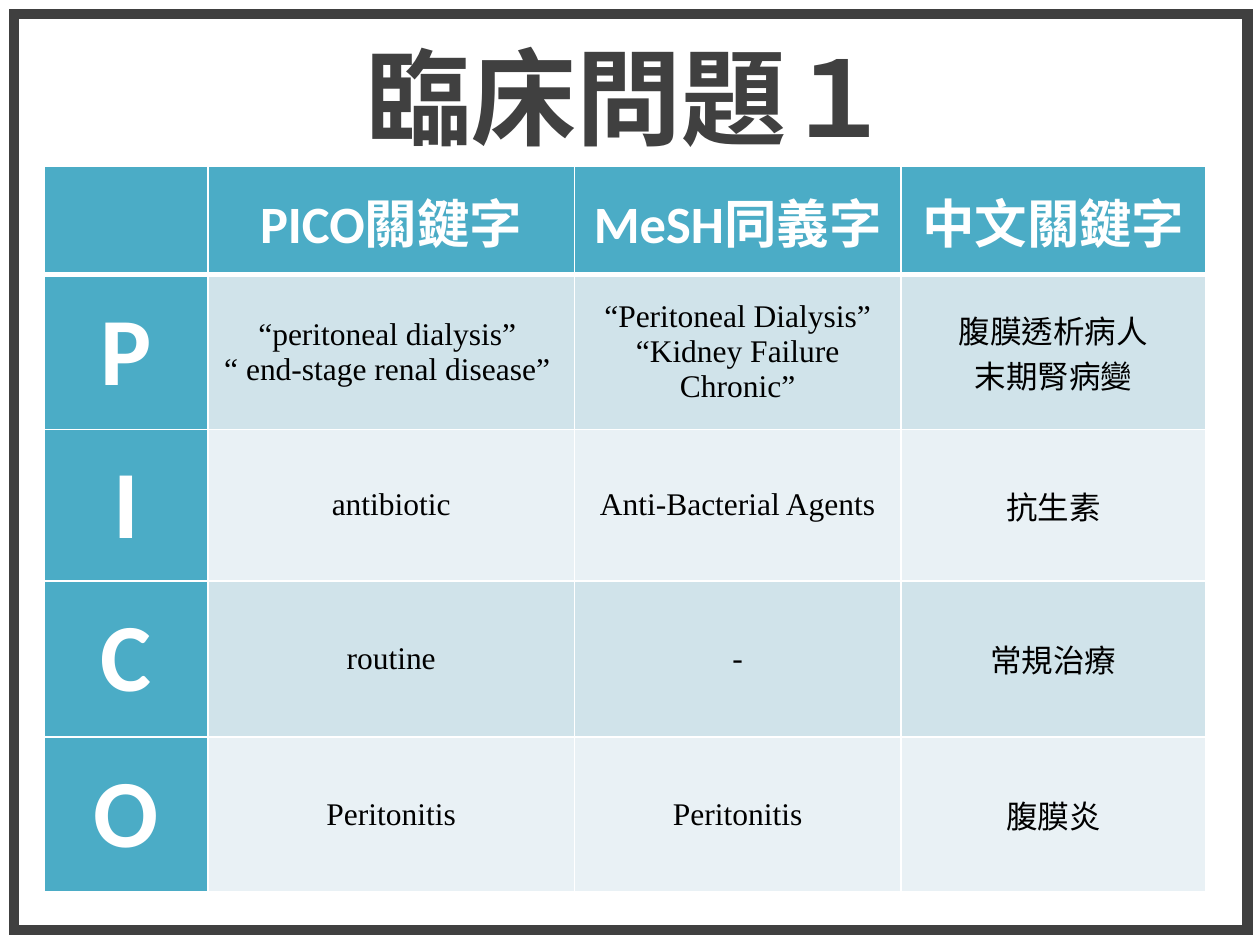
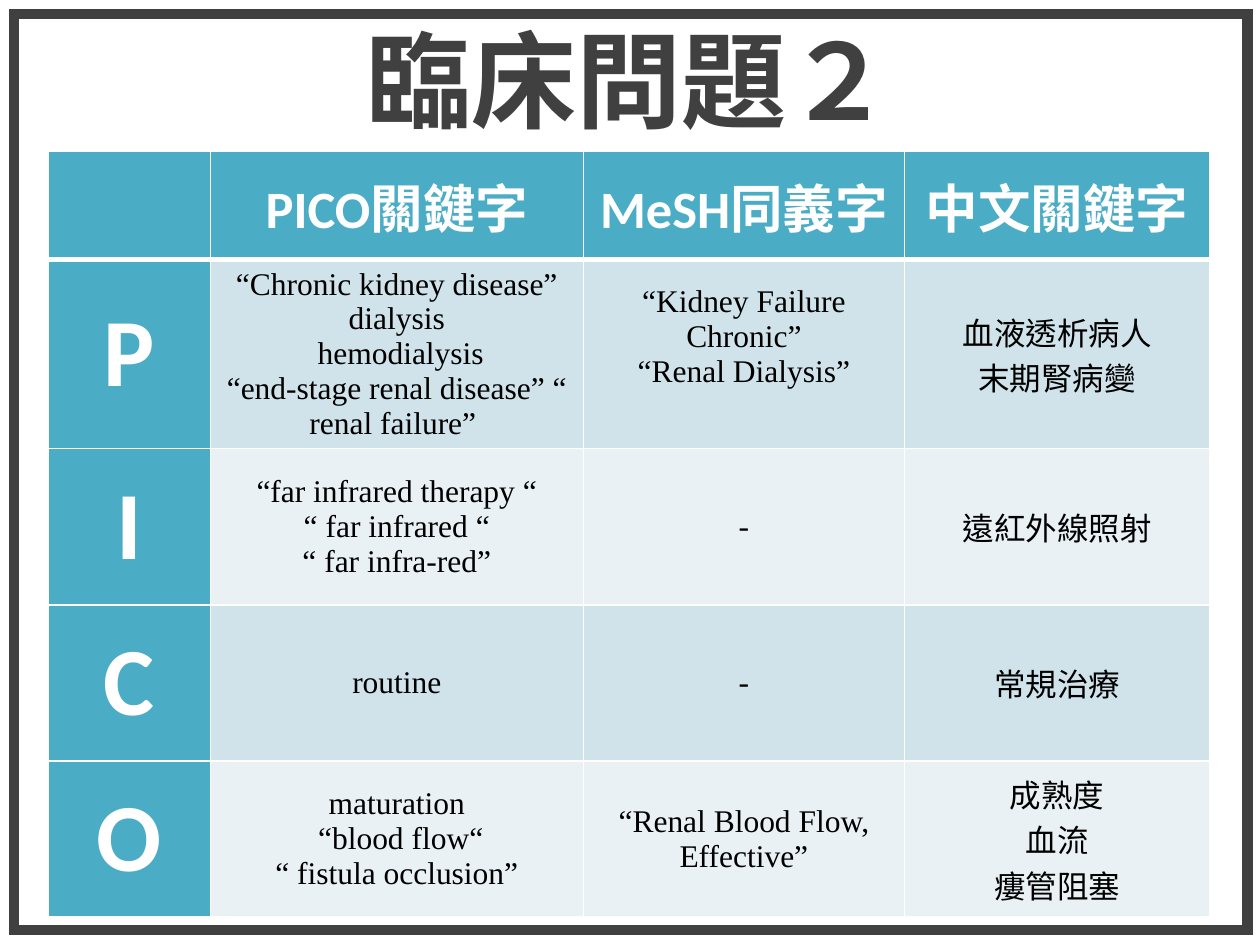
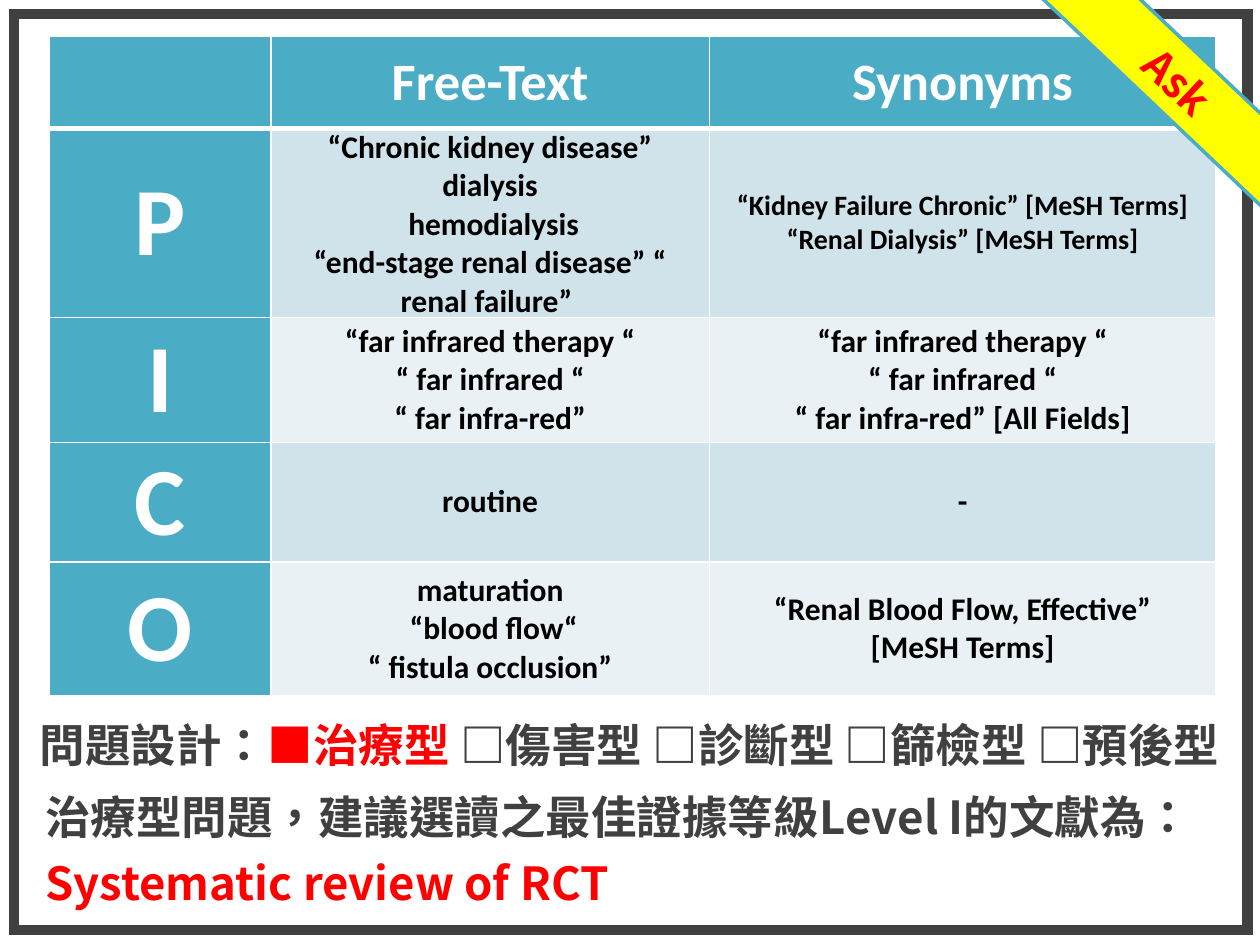
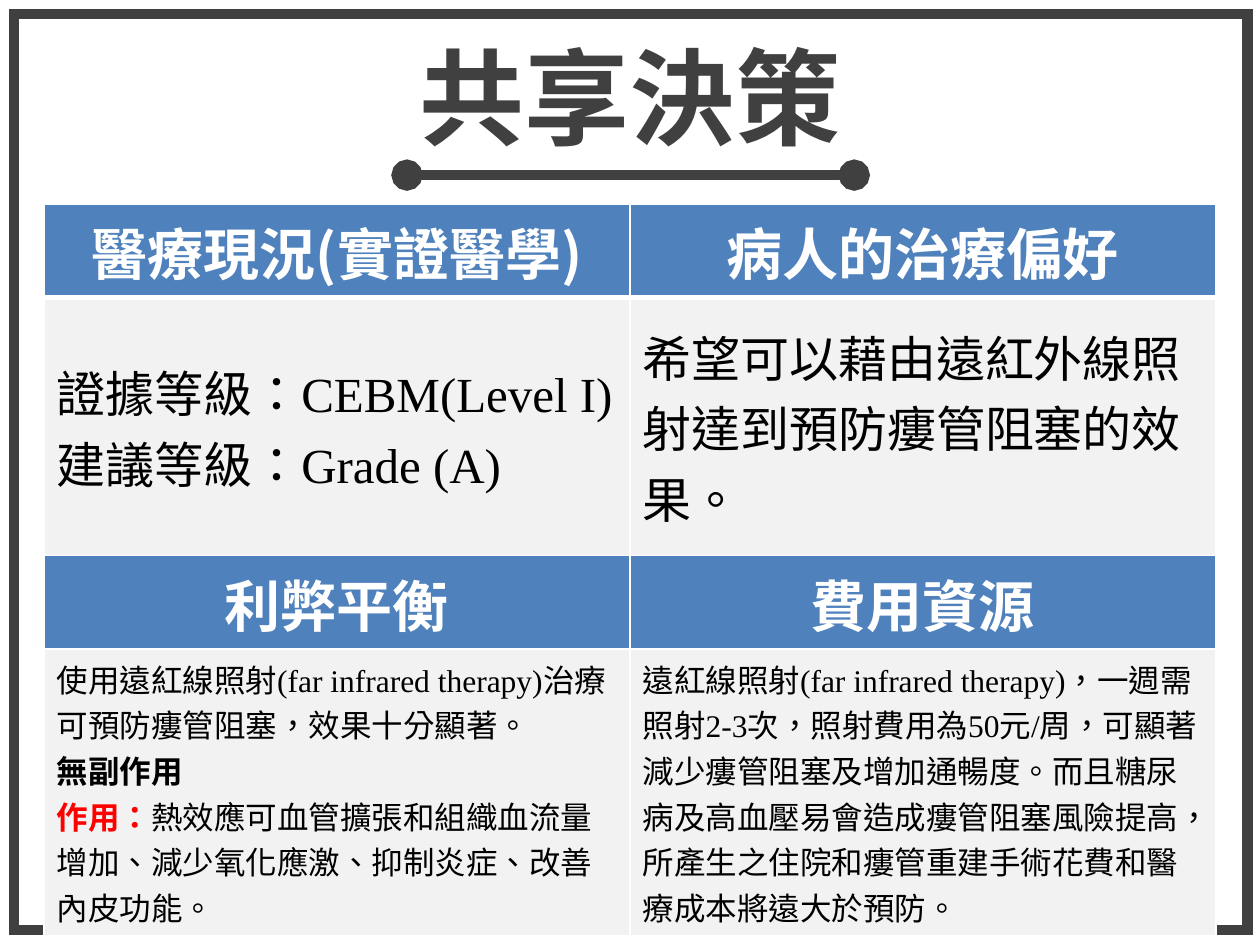
from dataclasses import dataclass, replace
from typing import Any, NamedTuple

import lxml.etree
import pptx
import pptx.dml.color
import pptx.enum.dml
import pptx.enum.shapes
import pptx.enum.text
import pptx.oxml.ns
import pptx.util

PX = 9144  # one px is 1/100 inch
ALIGN = pptx.enum.text.PP_ALIGN
ANCHOR = pptx.enum.text.MSO_ANCHOR
SHAPE = pptx.enum.shapes.MSO_SHAPE
qn = pptx.oxml.ns.qn


# Theme: colours, fonts and type sizes
@dataclass(frozen=True)
class Theme:
    ink: str = "404040"
    black: str = "000000"
    white: str = "FFFFFF"
    red: str = "FF0000"
    yellow: str = "FFFF00"
    teal: str = "4BACC6"
    bands: tuple[str, str] = ("D0E3EA", "E9F1F5")
    blue: str = "4F81BD"
    grey: str = "F2F2F2"
    sans: str = "Calibri"
    serif: str = "Times New Roman"
    cjk: str = "Noto Sans CJK SC"
    title: int = 60
    letter: int = 55
    panel_head: int = 32
    head: int = 30
    level: int = 28
    note: int = 26
    ribbon: int = 24
    body: int = 18
    small: int = 16
    rule: int = 6


T = Theme()


class Box(NamedTuple):
    x: int
    y: int
    w: int
    h: int

    def emu(self) -> list[int]:
        return [v * PX for v in self]


class Run(NamedTuple):
    text: str
    fmt: dict[str, Any] = {}


class Margins(NamedTuple):
    side: int
    top: int
    bottom: int


@dataclass(frozen=True)
class Cell:
    text: str | list[Run]
    fill: str
    size: int = T.body
    font: str = T.sans
    color: str = T.black
    bold: bool = True
    align: Any = ALIGN.CENTER
    anchor: Any = ANCHOR.MIDDLE
    margins: Margins = Margins(6, 0, 0)


# Drawing functions
def rgb(color: str) -> pptx.dml.color.RGBColor:
    return pptx.dml.color.RGBColor.from_string(color)


def write(tf, text: str | list[Run], *, size: int, font: str = T.cjk,
          color: str = T.ink, bold: bool = True, align=ALIGN.LEFT,
          spacing: float | None = None) -> None:
    """Fill a text frame; a line break in the text starts a paragraph."""
    def start(p):
        p.alignment = align
        if spacing:
            p.line_spacing = spacing
        return p

    p = start(tf.paragraphs[0])
    for run in [Run(text)] if isinstance(text, str) else text:
        for i, part in enumerate(run.text.split("\n")):
            if i:
                p = start(tf.add_paragraph())
            if not part:
                continue
            r = p.add_run()
            r.text = part
            r.font.size = pptx.util.Pt(size)
            r.font.name = font
            r.font.bold = run.fmt.get("bold", bold)
            r.font.color.rgb = rgb(run.fmt.get("color", color))
            rPr = r.font._element
            rPr.set("lang", "zh-TW")
            ea = lxml.etree.Element(qn("a:ea"), typeface=T.cjk)
            rPr.find(qn("a:latin")).addnext(ea)


def add_text(s, box: Box, text: str | list[Run], **fmt) -> None:
    tf = s.shapes.add_textbox(*box.emu()).text_frame
    tf.word_wrap = True
    tf.auto_size = pptx.enum.text.MSO_AUTO_SIZE.SHAPE_TO_FIT_TEXT
    write(tf, text, **fmt)


def add_title(s, text: str, box: Box) -> None:
    add_text(s, box, text, size=T.title, align=ALIGN.CENTER)


def add_rect(s, box: Box, line: str, width: int, fill: str | None = None):
    sp = s.shapes.add_shape(SHAPE.RECTANGLE, *box.emu())
    sp.shadow.inherit = False
    if fill:
        sp.fill.solid()
        sp.fill.fore_color.rgb = rgb(fill)
    else:
        sp.fill.background()
    sp.line.color.rgb = rgb(line)
    sp.line.width = pptx.util.Pt(width)
    ln = sp.line._get_or_add_ln()
    lxml.etree.SubElement(ln, qn("a:miter"), lim="800000")
    return sp


def add_dumbbell(s, x1: int, x2: int, y: int) -> None:
    cn = s.shapes.add_connector(pptx.enum.shapes.MSO_CONNECTOR.STRAIGHT,
                                x1 * PX, y * PX, x2 * PX, y * PX)
    cn.line.color.rgb = rgb(T.ink)
    cn.line.width = pptx.util.Pt(T.rule)
    ln = cn.line._get_or_add_ln()
    for end in ("a:headEnd", "a:tailEnd"):
        lxml.etree.SubElement(ln, qn(end), type="oval")
    lxml.etree.SubElement(cn._element.spPr, qn("a:effectLst"))


def set_borders(cell, row: int) -> None:
    """White 1 pt lines, and a 3 pt line under the header row."""
    thick = {"B": row == 0, "T": row == 1}
    tcPr = cell._tc.get_or_add_tcPr()
    for side in "LRTB":
        width = pptx.util.Pt(3 if thick.get(side) else 1)
        ln = lxml.etree.SubElement(tcPr, qn(f"a:ln{side}"), w=str(int(width)))
        fill = lxml.etree.SubElement(ln, qn("a:solidFill"))
        lxml.etree.SubElement(fill, qn("a:srgbClr"), val=T.white)


def add_grid(s, x: int, y: int, cols: list[int], rows: list[int],
             grid: list[list[Cell]]) -> None:
    box = Box(x, y, sum(cols), sum(rows))
    tbl = s.shapes.add_table(len(rows), len(cols), *box.emu()).table
    tbl.first_row = tbl.horz_banding = False
    for col, w in zip(tbl.columns, cols):
        col.width = w * PX
    for i, (row, h) in enumerate(zip(tbl.rows, rows)):
        row.height = h * PX
        for c, look in zip(row.cells, grid[i]):
            set_borders(c, i)
            c.fill.solid()
            c.fill.fore_color.rgb = rgb(look.fill)
            c.vertical_anchor = look.anchor
            c.margin_left = c.margin_right = look.margins.side * PX
            c.margin_top = look.margins.top * PX
            c.margin_bottom = look.margins.bottom * PX
            write(c.text_frame, look.text, size=look.size, font=look.font,
                  color=look.color, bold=look.bold, align=look.align)


def pico_grid(heads: list[str], body: list[list[str]],
              **fmt) -> list[list[Cell]]:
    """Header row, then one banded row for each of P, I, C and O."""
    head = Cell("", T.teal, size=T.head, color=T.white)
    grid = [[replace(head, text=h) for h in ["", *heads]]]
    for i, (letter, texts) in enumerate(zip("PICO", body)):
        grid.append([replace(head, text=letter, size=T.letter)]
                    + [Cell(t, T.bands[i % 2], **fmt) for t in texts])
    return grid


def new_slide(prs):
    s = prs.slides.add_slide(prs.slide_layouts[6])
    add_rect(s, Box(11, 11, 979, 727), T.ink, T.rule)
    return s


# Wording used on more than one slide
KEYWORD_HEADS = ["PICO關鍵字", "MeSH同義字", "中文關鍵字"]
KIDNEY = ("“Chronic kidney disease” dialysis\n hemodialysis\n"
          "“end-stage renal disease” “ renal failure” ")
INFRARED = "“far infrared therapy “\n“ far infrared “\n“ far infra-red”"
FISTULA = "maturation\n “blood flow“\n“ fistula occlusion”"
SERIF = dict(font=T.serif, bold=False)


# Slides
def question_1(prs) -> None:
    s = new_slide(prs)
    add_title(s, "臨床問題１", Box(-10, 21, 1018, 111))
    body = [
        ["“peritoneal dialysis” \n“ end-stage renal disease” ",
         "“Peritoneal Dialysis”\n“Kidney Failure Chronic”",
         "腹膜透析病人\n末期腎病變"],
        ["antibiotic", "Anti-Bacterial Agents", "抗生素"],
        ["routine", "-", "常規治療"],
        ["Peritonitis", "Peritonitis", "腹膜炎"],
    ]
    add_grid(s, 35, 132, [130, 291, 259, 242], [86, 123, 120, 124, 123],
             pico_grid(KEYWORD_HEADS, body, **SERIF))


def question_2(prs) -> None:
    s = new_slide(prs)
    add_title(s, "臨床問題２", Box(-10, 7, 1018, 111))
    body = [
        [KIDNEY, "“Kidney Failure Chronic”\n“Renal Dialysis”",
         "血液透析病人\n末期腎病變"],
        [INFRARED, "-", "遠紅外線照射"],
        ["routine", "-", "常規治療"],
        [FISTULA, "“Renal Blood Flow, Effective”", "成熟度\n血流\n瘻管阻塞"],
    ]
    grid = pico_grid(KEYWORD_HEADS, body, **SERIF)
    grid[1][2] = replace(grid[1][2], margins=Margins(6, 0, 28))
    add_grid(s, 38, 120, [129, 296, 255, 242], [86] + [124] * 4, grid)


def ask(prs) -> None:
    s = new_slide(prs)
    add_text(s, Box(-9, 564, 1018, 54),
             [Run("問題設計："), Run("■治療型 ", {"color": T.red}),
              Run("□傷害型 □診斷型 □篩檢型 □預後型")],
             size=T.note, align=ALIGN.CENTER)
    body = [
        [KIDNEY, "“Kidney Failure Chronic” [MeSH Terms]\n"
                 "“Renal Dialysis” [MeSH Terms]"],
        [INFRARED, INFRARED + " [All Fields]"],
        ["routine", "-"],
        [FISTULA, "“Renal Blood Flow, Effective”\n[MeSH Terms]"],
    ]
    grid = pico_grid(["Free-Text", "Synonyms"], body)
    grid[1][2] = replace(grid[1][2], size=T.small)
    add_grid(s, 39, 29, [176, 348, 402], [73, 106, 99, 95, 106], grid)

    # Corner ribbon
    sp = add_rect(s, Box(746, 38, 378, 53), T.teal, 2, T.yellow)
    sp.rotation = 43.5
    sp.text_frame.vertical_anchor = ANCHOR.MIDDLE
    write(sp.text_frame, "Ask", size=T.ribbon, color=T.red,
          align=ALIGN.CENTER)

    add_text(s, Box(26, 613, 1018, 111),
             [Run("治療型問題，建議選讀之最佳證據等級Level I的文獻為：\n"),
              Run("Systematic review of RCT", {"color": T.red})],
             size=T.note, spacing=1.2)


def shared_decision(prs) -> None:
    s = new_slide(prs)
    inset = Margins(10, 5, 5)
    head = Cell("", T.blue, size=T.panel_head, font=T.cjk, color=T.white,
                anchor=ANCHOR.TOP, margins=inset)
    body = Cell("", T.grey, align=ALIGN.LEFT, margins=inset, **SERIF)
    level = replace(body, size=T.level)
    benefit = [
        Run("使用遠紅線照射(far infrared therapy)治療可預防瘻管阻塞，"
            "效果十分顯著。\n"),
        Run("無副作用\n", {"bold": True}),
        Run("作用：", {"bold": True, "color": T.red}),
        Run("熱效應可血管擴張和組織血流量增加、減少氧化應激、抑制炎症、"
            "改善內皮功能。"),
    ]
    cost = ("遠紅線照射(far infrared therapy)，一週需照射2-3次，"
            "照射費用為50元/周，可顯著減少瘻管阻塞及增加通暢度。"
            "而且糖尿病及高血壓易會造成瘻管阻塞風險提高，"
            "所產生之住院和瘻管重建手術花費和醫療成本將遠大於預防。")
    rows = [
        (head, ["醫療現況(實證醫學)", "病人的治療偏好"]),
        (level, ["證據等級：CEBM(Level I)\n建議等級：Grade (A)",
                 "希望可以藉由遠紅外線照射達到預防瘻管阻塞的效果。"]),
        (head, ["利弊平衡", "費用資源"]),
        (body, [benefit, cost]),
    ]
    add_grid(s, 35, 162, [465, 465], [74, 205, 74, 228],
             [[replace(look, text=t) for t in texts] for look, texts in rows])
    add_title(s, "共享決策", Box(250, 21, 500, 111))
    add_dumbbell(s, 323, 678, 139)


def main() -> None:
    prs = pptx.Presentation()
    prs.slide_width, prs.slide_height = 1000 * PX, 750 * PX
    for build in (question_1, question_2, ask, shared_decision):
        build(prs)
    prs.save("out.pptx")


if __name__ == "__main__":
    main()
